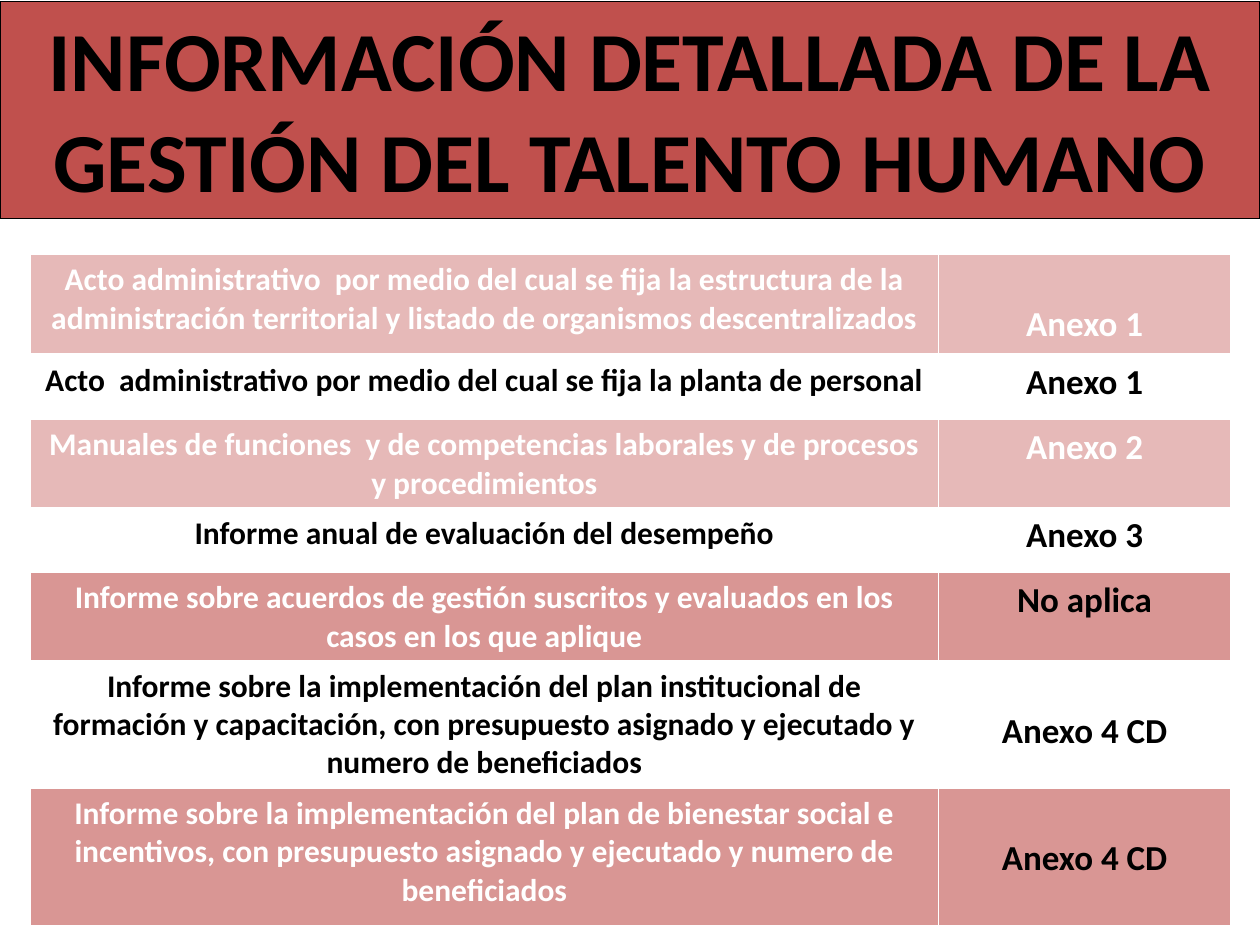
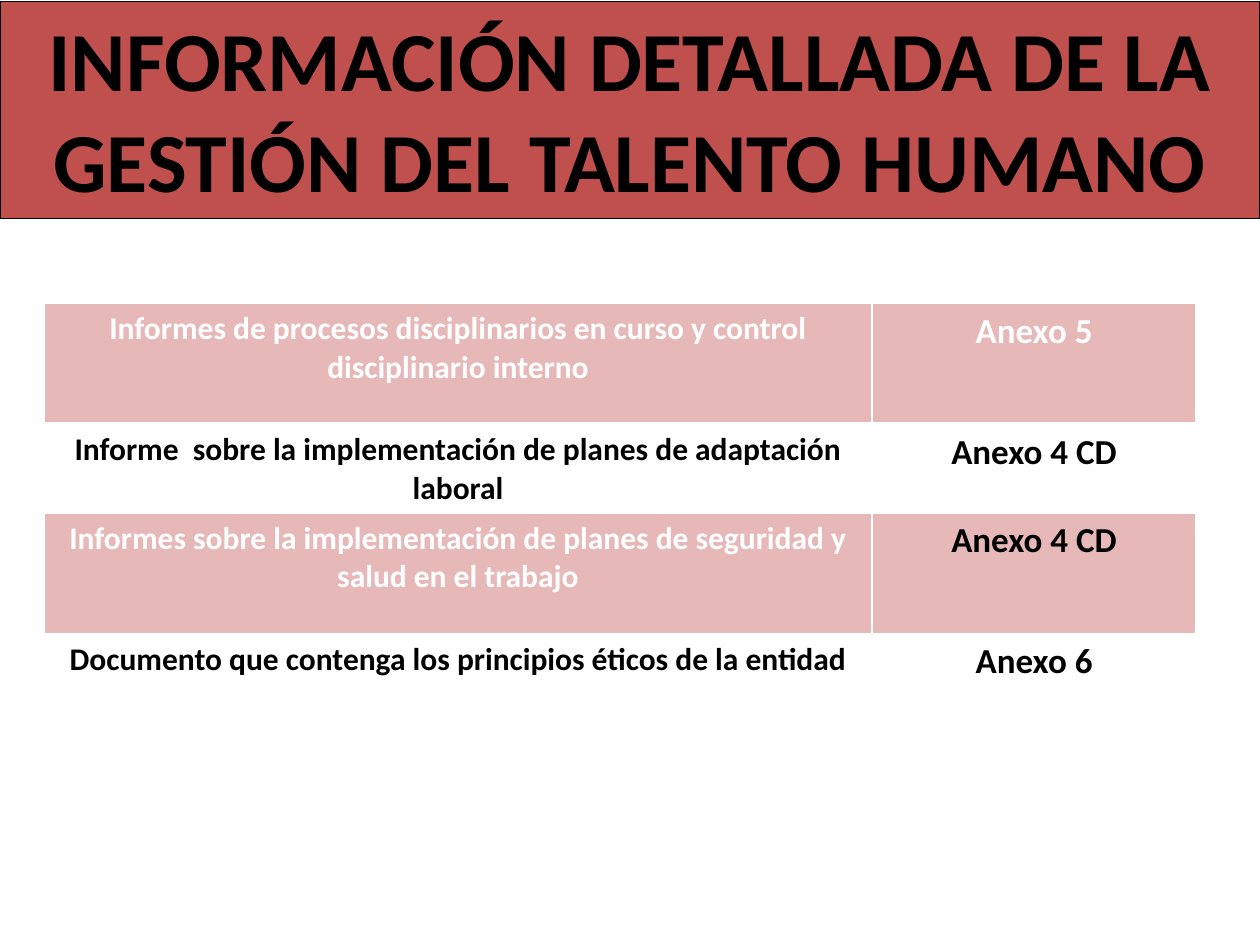
from dataclasses import dataclass

from lxml import etree
from pptx import Presentation
from pptx.dml.color import RGBColor
from pptx.enum.text import MSO_ANCHOR, MSO_AUTO_SIZE, PP_ALIGN
from pptx.oxml.ns import qn
from pptx.presentation import Presentation as Deck
from pptx.slide import Slide
from pptx.table import _Cell as Cell
from pptx.text.text import TextFrame
from pptx.util import Cm, Pt

BLACK = RGBColor(0x00, 0x00, 0x00)
WHITE = RGBColor(0xFF, 0xFF, 0xFF)
RED = RGBColor(0xC0, 0x50, 0x4D)
PINK = RGBColor(0xE6, 0xB9, 0xB8)
ROSE = RGBColor(0xD9, 0x96, 0x94)

FONT = "Calibri"
TITLE = "INFORMACIÓN DETALLADA DE LA GESTIÓN DEL TALENTO HUMANO"
TITLE_ONLY_LAYOUT = 5
CELL_MARGIN = 0.13
ANNEX_LINE = 0.86


@dataclass(frozen=True)
class AnnexRow:
    document: str
    annex: str
    height: float
    fill: RGBColor = WHITE
    annex_color: RGBColor = BLACK
    annex_lowered: bool = False


@dataclass(frozen=True)
class AnnexTable:
    left: float
    top: float
    column_widths: tuple[float, float]
    rows: tuple[AnnexRow, ...]


TABLES = (
    AnnexTable(0.61, 5.13, (18.31, 5.89), (
        AnnexRow("Acto administrativo  por medio del cual se fija la estructura de la "
                 "administración territorial y listado de organismos descentralizados",
                 "Anexo 1", 2.03, PINK, WHITE, annex_lowered=True),
        AnnexRow("Acto  administrativo por medio del cual se fija la planta de personal",
                 "Anexo 1", 1.3),
        AnnexRow("Manuales de funciones  y de competencias laborales y de procesos "
                 "y procedimientos", "Anexo 2", 1.78, PINK, WHITE),
        AnnexRow("Informe anual de evaluación del desempeño", "Anexo 3", 1.3),
        AnnexRow("Informe sobre acuerdos de gestión suscritos y evaluados en los "
                 "casos en los que aplique", "No aplica", 1.78, ROSE),
        AnnexRow("Informe sobre la implementación del plan institucional de formación y "
                 "capacitación, con presupuesto asignado y ejecutado y numero de "
                 "beneficiados", "Anexo 4 CD", 2.57, annex_lowered=True),
        AnnexRow("Informe sobre la implementación del plan de bienestar social e "
                 "incentivos, con presupuesto asignado y ejecutado y numero de "
                 "beneficiados", "Anexo 4 CD", 2.78, ROSE, annex_lowered=True),
    )),
    AnnexTable(0.89, 6.12, (16.69, 6.53), (
        AnnexRow("Informes de procesos disciplinarios en curso y control "
                 "disciplinario interno", "Anexo 5", 2.44, PINK, WHITE),
        AnnexRow("Informe  sobre la implementación de planes de adaptación laboral",
                 "Anexo 4 CD", 1.78),
        AnnexRow("Informes sobre la implementación de planes de seguridad y salud "
                 "en el trabajo", "Anexo 4 CD", 2.44, PINK),
        AnnexRow("Documento que contenga los principios éticos de la entidad",
                 "Anexo 6", 1.78),
    )),
)


def write_text(text_frame: TextFrame, text: str, size: int, color: RGBColor) -> None:
    text_frame.text = text
    paragraph = text_frame.paragraphs[0]
    paragraph.alignment = PP_ALIGN.CENTER
    font = paragraph.runs[0].font
    font.name, font.size, font.bold = FONT, Pt(size), True
    font.color.rgb = color


def add_line(parent: etree._Element, tag: str, width: float, color: RGBColor) -> etree._Element:
    line = etree.SubElement(parent, qn(tag), w=str(Pt(width)))
    solid_fill = etree.SubElement(line, qn("a:solidFill"))
    etree.SubElement(solid_fill, qn("a:srgbClr"), val=str(color))
    return line


def format_title(slide: Slide) -> None:
    title = slide.shapes.title
    title.left, title.top, title.width, title.height = Cm(0), Cm(0.03), Cm(25.4), Cm(4.37)
    title.fill.solid()
    title.fill.fore_color.rgb = RED
    title.line.color.rgb = BLACK
    title.line.width = Pt(0.75)
    text_frame = title.text_frame
    write_text(text_frame, TITLE, 48, BLACK)
    text_frame.word_wrap = True
    text_frame.auto_size = MSO_AUTO_SIZE.SHAPE_TO_FIT_TEXT
    text_frame.vertical_anchor = MSO_ANCHOR.TOP
    run_properties = text_frame.paragraphs[0].runs[0].font._element
    run_properties.insert(0, add_line(run_properties, "a:ln", 1.45, BLACK))


def format_cell(cell: Cell, fill: RGBColor, is_header: bool) -> None:
    properties = cell._tc.get_or_add_tcPr()
    for tag in ("a:lnL", "a:lnR", "a:lnT", "a:lnB"):
        width = 3 if is_header and tag == "a:lnB" else 1
        add_line(properties, tag, width, WHITE)
    cell.fill.solid()
    cell.fill.fore_color.rgb = fill


def add_annex_table(slide: Slide, content: AnnexTable) -> None:
    table = slide.shapes.add_table(
        len(content.rows), len(content.column_widths),
        Cm(content.left), Cm(content.top), Cm(sum(content.column_widths)),
        Cm(sum(row.height for row in content.rows)),
    ).table
    table.horz_banding = False
    for column, width in zip(table.columns, content.column_widths):
        column.width = Cm(width)
    for index, row in enumerate(content.rows):
        table.rows[index].height = Cm(row.height)
        document_cell, annex_cell = table.rows[index].cells
        for cell in (document_cell, annex_cell):
            format_cell(cell, row.fill, index == 0)
        document_color = BLACK if row.fill == WHITE else WHITE
        write_text(document_cell.text_frame, row.document, 18, document_color)
        write_text(annex_cell.text_frame, row.annex, 20, row.annex_color)
        if row.annex_lowered:
            annex_cell.margin_top = Cm(CELL_MARGIN + ANNEX_LINE)


def add_annex_slide(presentation: Deck, content: AnnexTable) -> None:
    slide = presentation.slides.add_slide(presentation.slide_layouts[TITLE_ONLY_LAYOUT])
    format_title(slide)
    add_annex_table(slide, content)


def main() -> None:
    presentation = Presentation()
    presentation.slide_width, presentation.slide_height = Cm(25.4), Cm(19.05)
    for content in TABLES:
        add_annex_slide(presentation, content)
    presentation.save("out.pptx")


if __name__ == "__main__":
    main()
